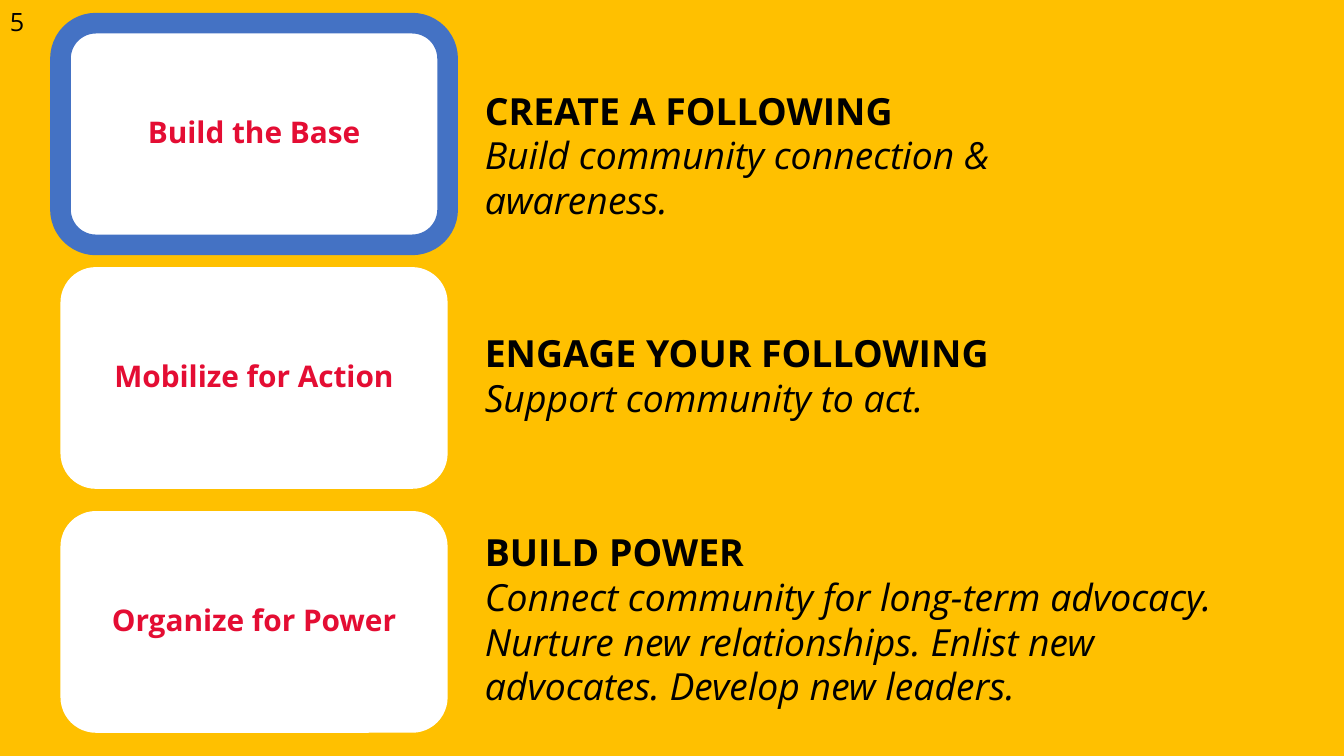
import pptx
import pptx.dml.color
import pptx.enum.shapes
import pptx.enum.text
import pptx.util

Inches = pptx.util.Inches


def colour(value):
    return pptx.dml.color.RGBColor.from_string(value)


def write(frame, lines, size, ink):
    frame.word_wrap = True
    for index, (text, bold, italic) in enumerate(lines):
        para = frame.paragraphs[0] if index == 0 else frame.add_paragraph()
        para.text = text
        para.font.name = "Open Sans"
        para.font.size = pptx.util.Pt(size)
        para.font.bold = bold
        para.font.italic = italic
        para.font.color.rgb = colour(ink)


deck = pptx.Presentation()
deck.slide_width = Inches(13.33)
deck.slide_height = Inches(7.5)
page = deck.slides.add_slide(deck.slide_layouts[6])
page.background.fill.solid()
page.background.fill.fore_color.rgb = colour("FFC000")

stages = [
    ("Build the Base", "CREATE A FOLLOWING",
     ["Build community connection & awareness."], 0.82, 5.84, 1.48),
    ("Mobilize for Action", "ENGAGE YOUR FOLLOWING",
     ["Support community to act."], 3.23, 5.84, 1.03),
    ("Organize for Power", "BUILD POWER",
     ["Connect community for long-term advocacy.",
      "Nurture new relationships. Enlist new advocates. Develop new leaders."],
     5.2, 7.88, 1.93),
]

for row, (stage, heading, details, top, width, height) in enumerate(stages):
    card = page.shapes.add_shape(
        pptx.enum.shapes.MSO_SHAPE.ROUNDED_RECTANGLE,
        Inches(0.6), Inches(0.23 + 2.42 * row), Inches(3.84), Inches(2.2))
    card.adjustments[0] = 0.16
    card.shadow.inherit = False
    card.fill.solid()
    card.fill.fore_color.rgb = colour("FFFFFF")
    if row == 0:
        card.line.color.rgb = colour("4472C4")
        card.line.width = pptx.util.Pt(14.75)
    else:
        card.line.fill.background()

    frame = card.text_frame
    frame.margin_left = frame.margin_right = Inches(0.14)
    frame.margin_top = frame.margin_bottom = Inches(0.14)
    frame.vertical_anchor = pptx.enum.text.MSO_ANCHOR.MIDDLE
    write(frame, [(stage, True, False)], 21.3, "E40D33")
    frame.paragraphs[0].alignment = pptx.enum.text.PP_ALIGN.CENTER
    frame.paragraphs[0].line_spacing = 0.9

    box = page.shapes.add_textbox(
        Inches(4.71), Inches(top), Inches(width), Inches(height))
    lines = [(heading, True, False)]
    lines += [(detail, False, True) for detail in details]
    write(box.text_frame, lines, 26.7, "000000")

number = page.shapes.add_textbox(
    Inches(0), Inches(0.01), Inches(0.6), Inches(0.4))
write(number.text_frame, [("5", False, False)], 18, "000000")

deck.save("out.pptx")
